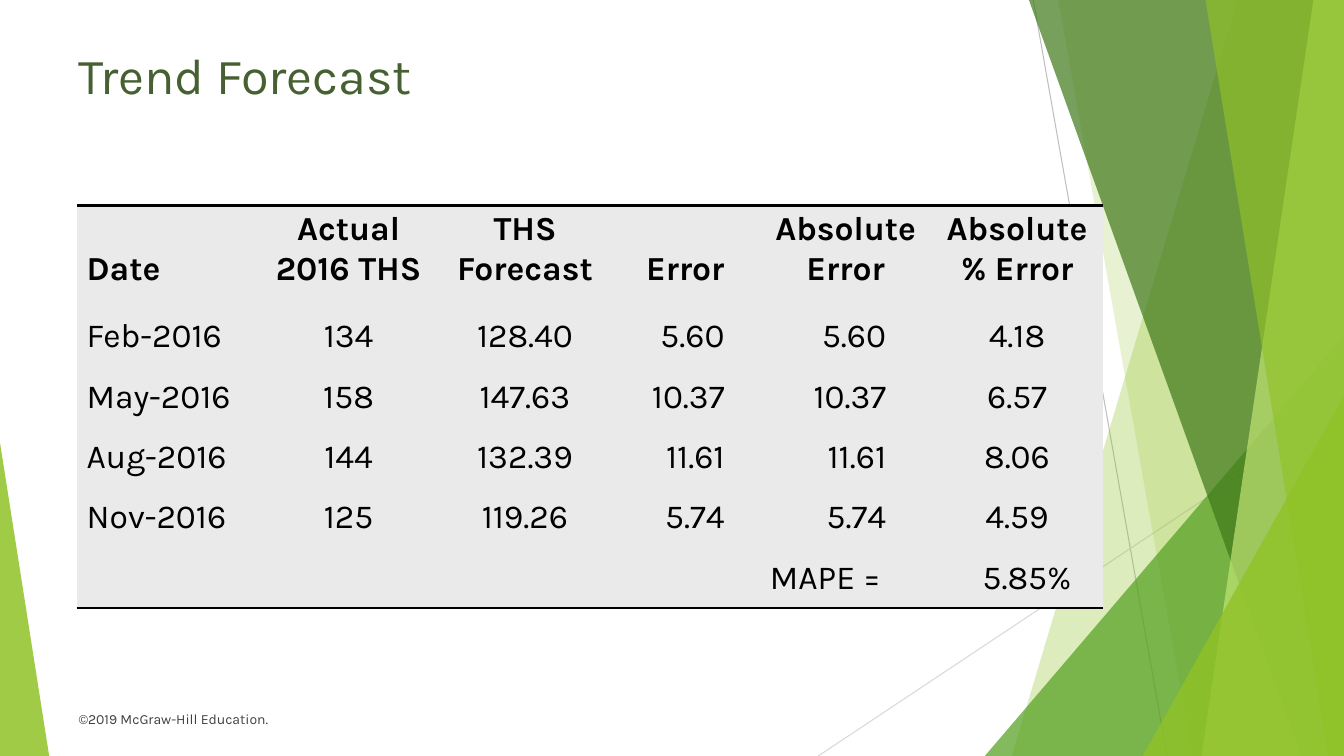
from lxml.etree import SubElement
from pptx import Presentation
from pptx.dml.color import RGBColor
from pptx.enum.shapes import MSO_CONNECTOR, MSO_SHAPE
from pptx.enum.text import MSO_ANCHOR, PP_ALIGN
from pptx.oxml import parse_xml
from pptx.oxml.ns import nsdecls, qn
from pptx.util import Cm, Pt

FONT = "Karla"
WIDTH, HEIGHT = 33.87, 19.05
LEFT, CENTER, RIGHT = PP_ALIGN.LEFT, PP_ALIGN.CENTER, PP_ALIGN.RIGHT
NO_STYLE = "{2D5ABB26-0587-4C30-8999-92F81FD0307C}"

HEADINGS = ["Date", "Actual 2016 THS", "THS Forecast", "Error",
            "Absolute Error", "Absolute\n% Error"]
FORECASTS = [
    ["Feb-2016", "134", "128.40", "5.60", "5.60", "4.18"],
    ["May-2016", "158", "147.63", "10.37", "10.37", "6.57"],
    ["Aug-2016", "144", "132.39", "11.61", "11.61", "8.06"],
    ["Nov-2016", "125", "119.26", "5.74", "5.74", "4.59"],
]
SUMMARY = ["", "", "", "", "MAPE =", "5.85%"]
COLUMN_WIDTHS = [4.57, 4.57, 4.32, 3.76, 4.32, 4.32]
HEADING_ALIGNS = [LEFT] + [CENTER] * 5
VALUE_ALIGNS = [LEFT, CENTER, CENTER, RIGHT, RIGHT, CENTER]
SUMMARY_ALIGNS = [LEFT] * 5 + [CENTER]


def color(hex_string):
    return RGBColor.from_string(hex_string)


def apply(target, values):
    for name, value in values.items():
        setattr(target, name, value)


def write(frame, text, size, hex_string, align=LEFT, bold=False):
    frame.text = text
    for para in frame.paragraphs:
        para.alignment = align
        apply(para.font, {"name": FONT, "size": Pt(size), "bold": bold})
        para.font.color.rgb = color(hex_string)


def add_text(page, box, text, size, hex_string):
    frame = page.shapes.add_textbox(*map(Cm, box)).text_frame
    frame.word_wrap = True
    write(frame, text, size, hex_string)


def paint(shape, hex_string, opacity):
    shape.shadow.inherit = False
    shape.line.fill.background()
    shape.fill.solid()
    shape.fill.fore_color.rgb = color(hex_string)
    tint = shape.fill._xPr.find(qn("a:solidFill"))[0]
    SubElement(tint, qn("a:alpha"), val=str(opacity * 1000))


def add_triangle(page, box, apex, hex_string, opacity):
    triangle = page.shapes.add_shape(MSO_SHAPE.ISOSCELES_TRIANGLE, *map(Cm, box))
    triangle.adjustments[0] = apex
    paint(triangle, hex_string, opacity)


def add_thin_line(page, start, end, hex_string):
    line = page.shapes.add_connector(MSO_CONNECTOR.STRAIGHT, *map(Cm, start + end))
    line.line.width = Pt(0.75)
    line.line.color.rgb = color(hex_string)
    SubElement(line._element.spPr, qn("a:effectLst"))


def add_facets(page, box):
    left, top, width, height = box
    right, bottom = left + width, top + height

    def band(top_offset, bottom_offset, hex_string, opacity):
        builder = page.shapes.build_freeform(Cm(left + top_offset), Cm(top), scale=1.0)
        corners = [(right, top), (right, bottom), (left + bottom_offset, bottom)]
        builder.add_line_segments([(Cm(x), Cm(y)) for x, y in corners])
        paint(builder.convert_to_shape(), hex_string, opacity)

    def corner(x, y, hex_string, opacity):
        area = (left + x, top + y, width - x, height - y)
        add_triangle(page, area, 1, hex_string, opacity)

    add_thin_line(page, (left + 5.42, top), (left + 8.79, bottom), "BFBFBF")
    add_thin_line(page, (right, top + 10.24), (left, bottom), "D9D9D9")
    # Back to front
    band(10.57, 4.88, "90C226", 30)
    band(6.05, 9.43, "90C226", 20)
    corner(4.2, 8.46, "54A021", 72)
    band(5.31, 12.17, "3F7819", 70)
    band(12.48, 9.66, "C0E474", 70)
    band(9.76, 12.86, "90C226", 65)
    corner(8.18, 9.98, "90C226", 80)


def add_rule(cell, side):
    # Border lines come before the fill in the cell properties
    cell._tc.get_or_add_tcPr().insert(0, parse_xml(
        f'<a:{side} {nsdecls("a")} w="28575"><a:solidFill>'
        f'<a:srgbClr val="000000"/></a:solidFill></a:{side}>'))


def add_forecast_table(page, box):
    rows = [HEADINGS, *FORECASTS, SUMMARY]
    last = len(rows) - 1
    table = page.shapes.add_table(len(rows), len(HEADINGS), *map(Cm, box)).table
    table._tbl.tblPr.find(qn("a:tableStyleId")).text = NO_STYLE
    for column, width in zip(table.columns, COLUMN_WIDTHS):
        column.width = Cm(width)
    for r, texts in enumerate(rows):
        table.rows[r].height = Cm(1.52 if r else 2.54)
        aligns = {0: HEADING_ALIGNS, last: SUMMARY_ALIGNS}.get(r, VALUE_ALIGNS)
        for c, text in enumerate(texts):
            cell = table.cell(r, c)
            cell.fill.solid()
            cell.fill.fore_color.rgb = color("EAEAEA")
            write(cell.text_frame, text, 24, "000000", aligns[c], bold=r == 0)
            cell.vertical_anchor = MSO_ANCHOR.MIDDLE
            if r == 0:
                apply(cell, {"vertical_anchor": MSO_ANCHOR.BOTTOM,
                             "margin_top": 0, "margin_bottom": Cm(0.45)})
                add_rule(cell, "lnT")
            elif r == last:
                add_rule(cell, "lnB")
            elif aligns[c] == RIGHT:
                cell.margin_right = Cm(0.89 if c == 3 else 1.14)
    table.cell(last, 5).margin_left = Cm(0.76)


def main():
    deck = Presentation()
    apply(deck, {"slide_width": Cm(WIDTH), "slide_height": Cm(HEIGHT)})
    page = deck.slides.add_slide(deck.slide_layouts[6])

    # Footer and background
    add_text(page, (1.73, 17.78, 22.86, 1.02), "©2019 McGraw-Hill Education.", 10, "404040")
    add_facets(page, (20.62, 0, WIDTH - 20.62, HEIGHT))
    add_triangle(page, (0, 11.15, 1.24, HEIGHT - 11.15), 0, "90C226", 85)

    # Title and table
    add_text(page, (1.73, 0.99, 25.4, 3.3), "Trend Forecast", 36, "466032")
    add_forecast_table(page, (1.93, 5.18, sum(COLUMN_WIDTHS), 10.14))
    deck.save("out.pptx")


if __name__ == "__main__":
    main()
